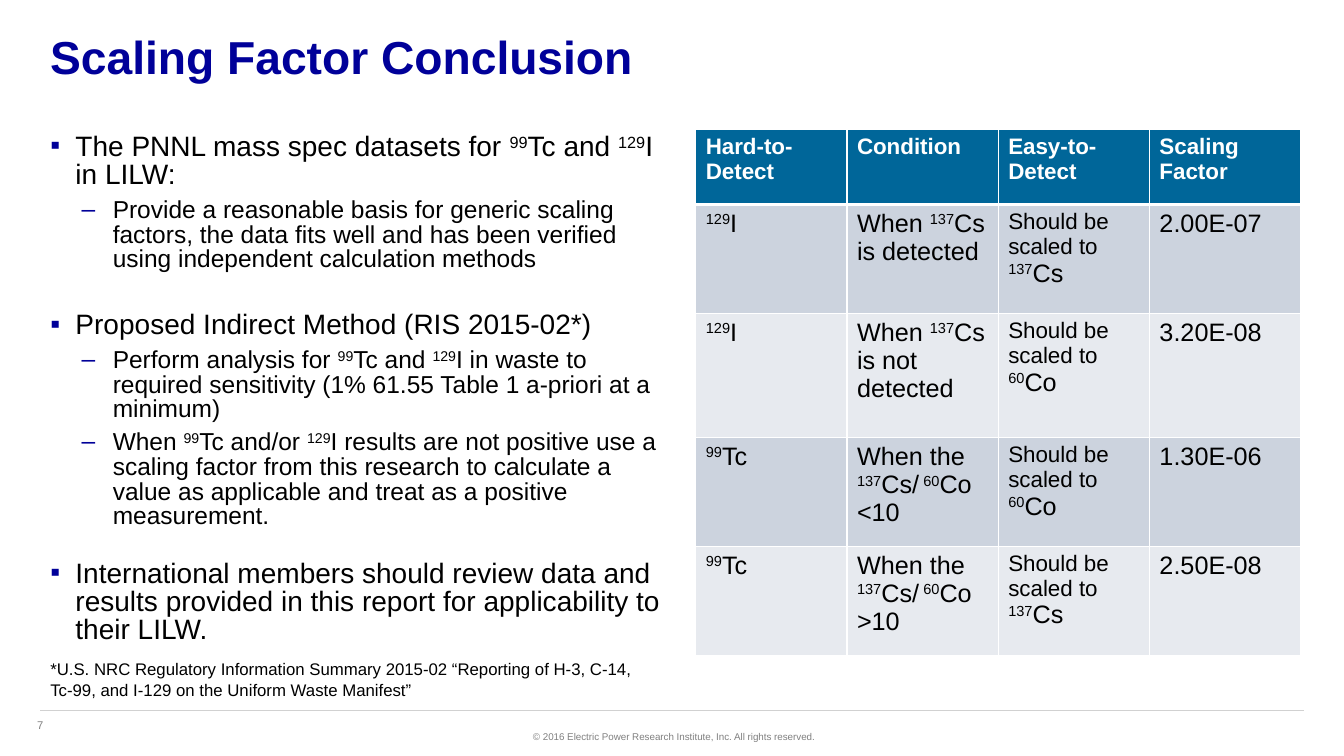
from dataclasses import dataclass
from typing import Optional

from lxml.etree import SubElement
from pptx import Presentation
from pptx.dml.color import RGBColor
from pptx.enum.shapes import MSO_CONNECTOR
from pptx.enum.text import MSO_ANCHOR, PP_ALIGN
from pptx.oxml.ns import qn
from pptx.util import Emu, Pt

PX = 9144  # 100 px to the inch
FONT = "Arial"
NAVY, TEAL, BLACK, WHITE = "000099", "006699", "000000", "FFFFFF"
GRAY, RULE_GRAY = "808080", "D1D1D1"
BANDS = ("CCD3DE", "E7EAEF")


@dataclass(frozen=True)
class Style:
    size: float
    color: str = BLACK
    bold: bool = False
    lead_size: Optional[float] = None


@dataclass(frozen=True)
class Level:
    mark: str
    indent: int
    hanging: int
    style: Style


@dataclass(frozen=True)
class Bullet:
    level: Level
    text: str
    before: int = 0


@dataclass(frozen=True)
class Label:
    box: tuple[int, int, int, int]
    text: str
    style: Style
    anchor: MSO_ANCHOR = MSO_ANCHOR.TOP
    align: PP_ALIGN = PP_ALIGN.LEFT
    wrap: bool = True
    spacing: float = 1.0


MAIN = Level("▪", 25, 25, Style(20))
SUB = Level("–", 62, 31, Style(17.5))
HEADER = Style(16, WHITE, bold=True)
CELL = Style(18)
SCALED_CELL = Style(18, lead_size=16)

LABELS = (
    Label((27, 708, 89, 24), "7", Style(8, GRAY)),
    Label((516, 720, 302, 22),
          "© 2016 Electric Power Research Institute, Inc. All rights reserved.",
          Style(7, GRAY), align=PP_ALIGN.RIGHT, wrap=False),
    Label((40, 20, 1250, 80), "Scaling Factor Conclusion", Style(33, NAVY, bold=True),
          anchor=MSO_ANCHOR.MIDDLE, spacing=0.85),
    Label((40, 649, 628, 50),
          "*U.S. NRC Regulatory Information Summary 2015-02 “Reporting of H-3, C-14, "
          "Tc-99, and I-129 on the Uniform Waste Manifest”", Style(12)),
)

# Text between carets is superscript.
BULLETS = (
    Bullet(MAIN, "The PNNL mass spec datasets for ^99^Tc and ^129^I in LILW:"),
    Bullet(SUB, "Provide a reasonable basis for generic scaling factors, the data fits well "
                "and has been verified using independent calculation methods"),
    Bullet(MAIN, "Proposed Indirect Method (RIS 2015-02*)", before=22),
    Bullet(SUB, "Perform analysis for ^99^Tc and ^129^I in waste to required sensitivity "
                "(1% 61.55 Table 1 a-priori at a minimum)"),
    Bullet(SUB, "When ^99^Tc and/or ^129^I results are not positive use a scaling factor "
                "from this research to calculate a value as applicable and treat as a "
                "positive measurement."),
    Bullet(MAIN, "International members should review data and results provided in this "
                 "report for applicability to their LILW.", before=16),
)

FACTORS = (
    ("Hard-to-Detect", "Condition", "Easy-to-Detect", "Scaling Factor"),
    ("^129^I", "When ^137^Cs is detected", "Should be scaled to ^137^Cs", "2.00E-07"),
    ("^129^I", "When ^137^Cs is not detected", "Should be scaled to ^60^Co", "3.20E-08"),
    ("^99^Tc", "When the ^137^Cs/^ 60^Co <10", "Should be scaled to ^60^Co", "1.30E-06"),
    ("^99^Tc", "When the ^137^Cs/^ 60^Co >10", "Should be scaled to ^137^Cs", "2.50E-08"),
)
ROW_HEIGHTS = (75, 108, 123, 108, 108)
COL_WIDTH = 150


def px(*lengths: int) -> list[Emu]:
    return [Emu(n * PX) for n in lengths]


def rgb(color: str) -> RGBColor:
    return RGBColor.from_string(color)


def write(p, text: str, style: Style) -> None:
    """Fill a paragraph, raising the parts between carets."""
    for i, part in enumerate(text.split("^")):
        if not part:
            continue
        r = p.add_run()
        r.text = part
        r.font.name = FONT
        r.font.size = Pt(style.lead_size if style.lead_size and i == 0 else style.size)
        r.font.bold = style.bold
        r.font.color.rgb = rgb(style.color)
        if i % 2:
            r.font._element.set("baseline", "30000")


def add_label(slide, label: Label) -> None:
    tf = slide.shapes.add_textbox(*px(*label.box)).text_frame
    tf.word_wrap = label.wrap
    tf.vertical_anchor = label.anchor
    p = tf.paragraphs[0]
    p.alignment = label.align
    p.line_spacing = label.spacing
    write(p, label.text, label.style)


def set_bullet(p, level: Level) -> None:
    pPr = p._p.get_or_add_pPr()
    pPr.set("marL", str(level.indent * PX))
    pPr.set("indent", str(-level.hanging * PX))
    color = SubElement(pPr, qn("a:buClr"))
    SubElement(color, qn("a:srgbClr"), val=NAVY)
    SubElement(pPr, qn("a:buFont"), typeface=FONT)
    SubElement(pPr, qn("a:buChar"), char=level.mark)


def add_bullets(slide, bullets: tuple[Bullet, ...]) -> None:
    tf = slide.shapes.add_textbox(*px(40, 128, 628, 546)).text_frame
    tf.word_wrap = True
    for i, bullet in enumerate(bullets):
        p = tf.add_paragraph() if i else tf.paragraphs[0]
        set_bullet(p, bullet.level)
        p.line_spacing = 0.84
        p.space_before = Pt(bullet.before)
        p.space_after = Pt(6)
        write(p, bullet.text, bullet.level.style)


def set_borders(cell, top: float, bottom: float) -> None:
    tcPr = cell._tc.get_or_add_tcPr()
    for i, (side, width) in enumerate((("L", 1), ("R", 1), ("T", top), ("B", bottom))):
        ln = tcPr.makeelement(qn(f"a:ln{side}"), {"w": str(Pt(width))})
        fill = SubElement(ln, qn("a:solidFill"))
        SubElement(fill, qn("a:srgbClr"), val=WHITE)
        tcPr.insert(i, ln)


def add_factor_table(slide) -> None:
    cols = len(FACTORS[0])
    frame = slide.shapes.add_table(
        len(FACTORS), cols, *px(690, 128, COL_WIDTH * cols, sum(ROW_HEIGHTS)))
    table = frame.table
    table.first_row = table.horz_banding = False
    for col in table.columns:
        col.width = Emu(COL_WIDTH * PX)
    for r, (texts, height) in enumerate(zip(FACTORS, ROW_HEIGHTS)):
        table.rows[r].height = Emu(height * PX)
        for c, text in enumerate(texts):
            cell = table.cell(r, c)
            cell.fill.solid()
            cell.fill.fore_color.rgb = rgb(BANDS[(r - 1) % 2] if r else TEAL)
            set_borders(cell, top=3 if r == 1 else 1, bottom=1 if r else 3)
            style = HEADER if r == 0 else SCALED_CELL if c == 2 else CELL
            write(cell.text_frame.paragraphs[0], text, style)


def add_footer_rule(slide) -> None:
    line = slide.shapes.add_connector(MSO_CONNECTOR.STRAIGHT, *px(40, 705, 1293, 705))
    line.line.color.rgb = rgb(RULE_GRAY)
    line.line.width = Pt(0.75)
    SubElement(line._element.spPr, qn("a:effectLst"))


def main() -> None:
    prs = Presentation()
    prs.slide_width, prs.slide_height = px(1333, 750)
    slide = prs.slides.add_slide(prs.slide_layouts[6])
    add_footer_rule(slide)
    for label in LABELS:
        add_label(slide, label)
    add_bullets(slide, BULLETS)
    add_factor_table(slide)
    prs.save("out.pptx")


if __name__ == "__main__":
    main()
